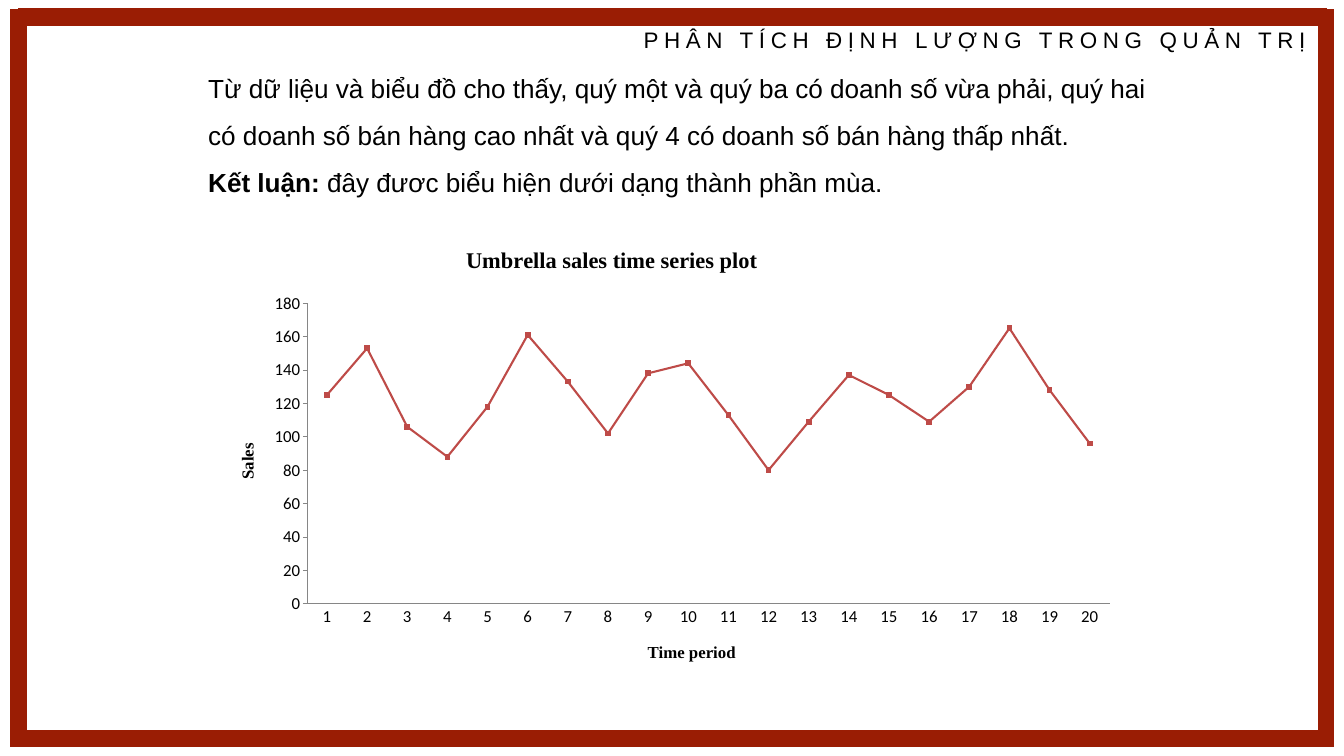
"""Build the umbrella sales slide with its time series chart."""
import pptx
import pptx.chart.data
import pptx.dml.color
import pptx.enum.chart
import pptx.enum.shapes
import pptx.oxml
import pptx.oxml.ns
import pptx.util

Cm, Pt = pptx.util.Cm, pptx.util.Pt
RGBColor = pptx.dml.color.RGBColor
kinds = pptx.enum.chart
qn = pptx.oxml.ns.qn

FRAME = RGBColor(0x9A, 0x1D, 0x04)
SERIES = RGBColor(0xBE, 0x4B, 0x48)
AXIS = RGBColor(0x86, 0x86, 0x86)
BLACK = RGBColor(0, 0, 0)
SALES = (125, 153, 106, 88, 118, 161, 133, 102, 138, 144,
         113, 80, 109, 137, 125, 109, 130, 165, 128, 96)


def place(node, index, inner="", **parts):
    for old in node.findall(qn("c:layout")):
        node.remove(old)
    modes = "".join(f'<c:{key}Mode val="edge"/>' for key in "xy")
    sizes = "".join(f'<c:{key} val="{val}"/>' for key, val in parts.items())
    node.insert(index, pptx.oxml.parse_xml(
        f'<c:layout {pptx.oxml.ns.nsdecls("c")}><c:manualLayout>'
        f'{inner}{modes}{sizes}</c:manualLayout></c:layout>'))


def label(owner, text, size, x, y):
    title = owner.chart_title if hasattr(owner, "chart_title") else owner.axis_title
    title.text_frame.text = text
    font = title.text_frame.paragraphs[0].runs[0].font
    font.name, font.size, font.bold = "Times New Roman", Pt(size), True
    font.color.rgb = BLACK
    place(title._element, 1, x=x, y=y)


deck = pptx.Presentation()
deck.slide_width, deck.slide_height = Cm(50.8), Cm(28.58)
slide = deck.slides.add_slide(deck.slide_layouts[6])
shapes = slide.shapes

for top, high, width in ((0.66, 27.25, 18), (0.3, 27.61, 0.75)):
    frame = shapes.add_shape(pptx.enum.shapes.MSO_SHAPE.RECTANGLE,
                             Cm(0.69), Cm(top), Cm(49.43), Cm(high))
    frame.shadow.inherit = False
    frame.fill.background()
    frame.line.color.rgb = FRAME
    frame.line.width = Pt(width)
    frame.line._get_or_add_ln().append(pptx.oxml.parse_xml(
        f'<a:miter {pptx.oxml.ns.nsdecls("a")} lim="800000"/>'))

data = pptx.chart.data.CategoryChartData()
data.categories = [str(num) for num in range(1, len(SALES) + 1)]
data.add_series("Series 1", SALES)
chart = shapes.add_chart(kinds.XL_CHART_TYPE.LINE_MARKERS, Cm(8.15), Cm(8.79),
                         Cm(34.49), Cm(16.71), data).chart
chart.has_legend = False
chart.font.name, chart.font.size = "Calibri", Pt(18)
chart.font.color.rgb = BLACK
label(chart, "Umbrella sales time series plot", 24, 0.27, 0.02)
label(chart.category_axis, "Time period", 18, 0.47, 0.92)
label(chart.value_axis, "Sales", 18, 0.02, 0.47)
place(chart.plots[0]._element.getparent(), 0, '<c:layoutTarget val="inner"/>',
      x=0.1, y=0.16, w=0.88, h=0.68)

for axis, tick in ((chart.category_axis, kinds.XL_TICK_MARK.NONE),
                   (chart.value_axis, kinds.XL_TICK_MARK.OUTSIDE)):
    axis.has_major_gridlines = False
    axis.major_tick_mark = tick
    axis.minor_tick_mark = kinds.XL_TICK_MARK.NONE
    axis.format.line.color.rgb = AXIS
    axis.format.line.width = Pt(0.75)
chart.value_axis.minimum_scale = 0
chart.value_axis.maximum_scale = 180
chart.value_axis.major_unit = 20

chart.plots[0].vary_by_categories = False
line = chart.plots[0].series[0]
line.smooth = False
line.format.line.color.rgb = SERIES
line.format.line.width = Pt(2.25)
line.marker.style = kinds.XL_MARKER_STYLE.SQUARE
line.marker.size = 5
line.marker.format.fill.solid()
line.marker.format.fill.fore_color.rgb = SERIES
line.marker.format.line.color.rgb = SERIES

body = shapes.add_textbox(Cm(7.62), Cm(2.01), Cm(36.73), Cm(5.41)).text_frame
body.word_wrap = True
body.text = ("Từ dữ liệu và biểu đồ cho thấy, quý một và quý ba có doanh số vừa phải, "
             "quý hai có doanh số bán hàng cao nhất và quý 4 có doanh số bán hàng thấp nhất.\n"
             "Kết luận: ")
body.paragraphs[1].runs[0].font.bold = True
body.paragraphs[1].add_run().text = "đây đươc biểu hiện dưới dạng thành phần mùa."
for para in body.paragraphs:
    para.line_spacing = 1.5

head = shapes.add_textbox(Cm(24.33), Cm(0.99), Cm(27.23), Cm(1.02)).text_frame
head.word_wrap = True
head.margin_left = head.margin_top = head.margin_right = head.margin_bottom = 0
head.text = "PHÂN TÍCH ĐỊNH LƯỢNG TRONG QUẢN TRỊ"
head.paragraphs[0].runs[0]._r.get_or_add_rPr().set("spc", "600")

for frame, size in ((body, 28), (head, 24)):
    for para in frame.paragraphs:
        for run in para.runs:
            run.font.name, run.font.size = "Arial", Pt(size)
            run.font.color.rgb = BLACK

deck.save("out.pptx")
